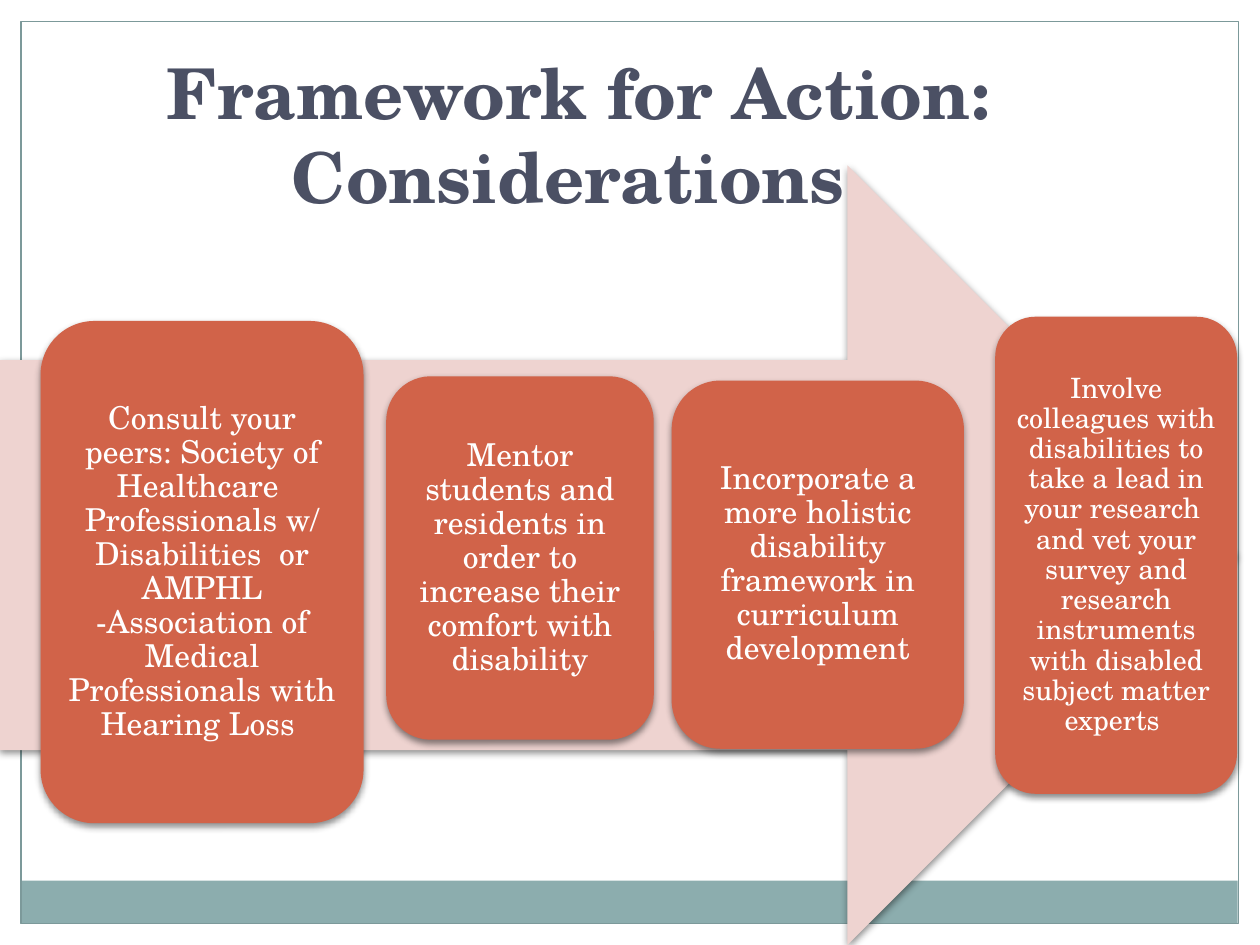
from lxml import etree
from pptx import Presentation
from pptx.dml.color import RGBColor
from pptx.enum.shapes import MSO_SHAPE
from pptx.enum.text import MSO_ANCHOR, PP_ALIGN
from pptx.oxml.ns import qn
from pptx.util import Pt

RECTANGLE = MSO_SHAPE.RECTANGLE
ROUNDED = MSO_SHAPE.ROUNDED_RECTANGLE
ARROW = MSO_SHAPE.RIGHT_ARROW
MIDDLE = MSO_ANCHOR.MIDDLE
CENTER = PP_ALIGN.CENTER
TITLE_ONLY = 5
FONT = "TeX Gyre Schola"
TEAL, TEAL_LINE = "8CADAE", "7C999A"
SLATE, PINK, RUST, WHITE = "4B5064", "EED3D0", "D16349", "FFFFFF"


def color(hex_value):
    return RGBColor.from_string(hex_value)


def add_block(kind, box, fill=None, line=None, shadow=False):
    """Add a preset shape with optional fill, outline and soft shadow below."""
    block = slide.shapes.add_shape(kind, *map(Pt, box))
    block.shadow.inherit = False
    if fill:
        block.fill.solid()
        block.fill.fore_color.rgb = color(fill)
    else:
        block.fill.background()
    if line:
        block.line.color.rgb = color(line)
        block.line.width = Pt(0.75)
    else:
        block.line.fill.background()
    if shadow:
        effects = block.element.spPr.find(qn("a:effectLst"))
        outer = etree.SubElement(effects, qn("a:outerShdw"), blurRad=str(Pt(4)),
                                 dist=str(Pt(2)), dir="5400000", rotWithShape="0")
        black = etree.SubElement(outer, qn("a:srgbClr"), val="000000")
        etree.SubElement(black, qn("a:alpha"), val="45000")
    return block


prs = Presentation()
prs.slide_width, prs.slide_height = Pt(720), Pt(540)
slide = prs.slides.add_slide(prs.slide_layouts[TITLE_ONLY])

add_block(RECTANGLE, (11.6, 503.2, 695.6, 24.6), fill=TEAL)
add_block(RECTANGLE, (12, 12.2, 695.6, 515.6), line=TEAL_LINE)

title = slide.shapes.title
title.left, title.top, title.width, title.height = map(Pt, (37.4, 24, 586, 104.4))
title.text_frame.text = "Framework for Action: Considerations "
title.text_frame.vertical_anchor = MIDDLE
heading = title.text_frame.paragraphs[0]
heading.alignment = CENTER
heading_format = {"name": FONT, "size": Pt(40), "bold": True}
for attribute, value in heading_format.items():
    setattr(heading.runs[0].font, attribute, value)
heading.runs[0].font.color.rgb = color(SLATE)

add_block(ARROW, (0, 94.5, 707, 445.5), fill=PINK, shadow=True)

# Left, top, width, height, text size, wording
considerations = [
    (23.2, 183.4, 184.6, 287, 18,
     "Consult your peers: Society of Healthcare  Professionals w/ Disabilities  or "
     "AMPHL -Association of Medical Professionals with Hearing Loss "),
    (220.7, 215, 152.9, 207.7, 18,
     "Mentor students and residents in order to increase their comfort with disability"),
    (383.8, 217.5, 167, 210.4, 18,
     "Incorporate a more holistic disability framework in curriculum development"),
    (568.7, 181, 138.2, 272.6, 16,
     "Involve colleagues with disabilities to take a lead in your research  and vet your "
     "survey and research instruments with disabled subject matter experts "),
]
frame_format = {"word_wrap": True, "vertical_anchor": MIDDLE,
                "margin_left": Pt(5), "margin_right": Pt(5),
                "margin_top": Pt(5), "margin_bottom": Pt(5)}
for *box, size, wording in considerations:
    card = add_block(ROUNDED, box, fill=RUST, shadow=True)
    for attribute, value in frame_format.items():
        setattr(card.text_frame, attribute, value)
    card.text_frame.text = wording
    paragraph = card.text_frame.paragraphs[0]
    paragraph.alignment = CENTER
    paragraph.line_spacing = 0.9
    font = paragraph.runs[0].font
    font.name, font.size = FONT, Pt(size)
    font.color.rgb = color(WHITE)

prs.save("out.pptx")
